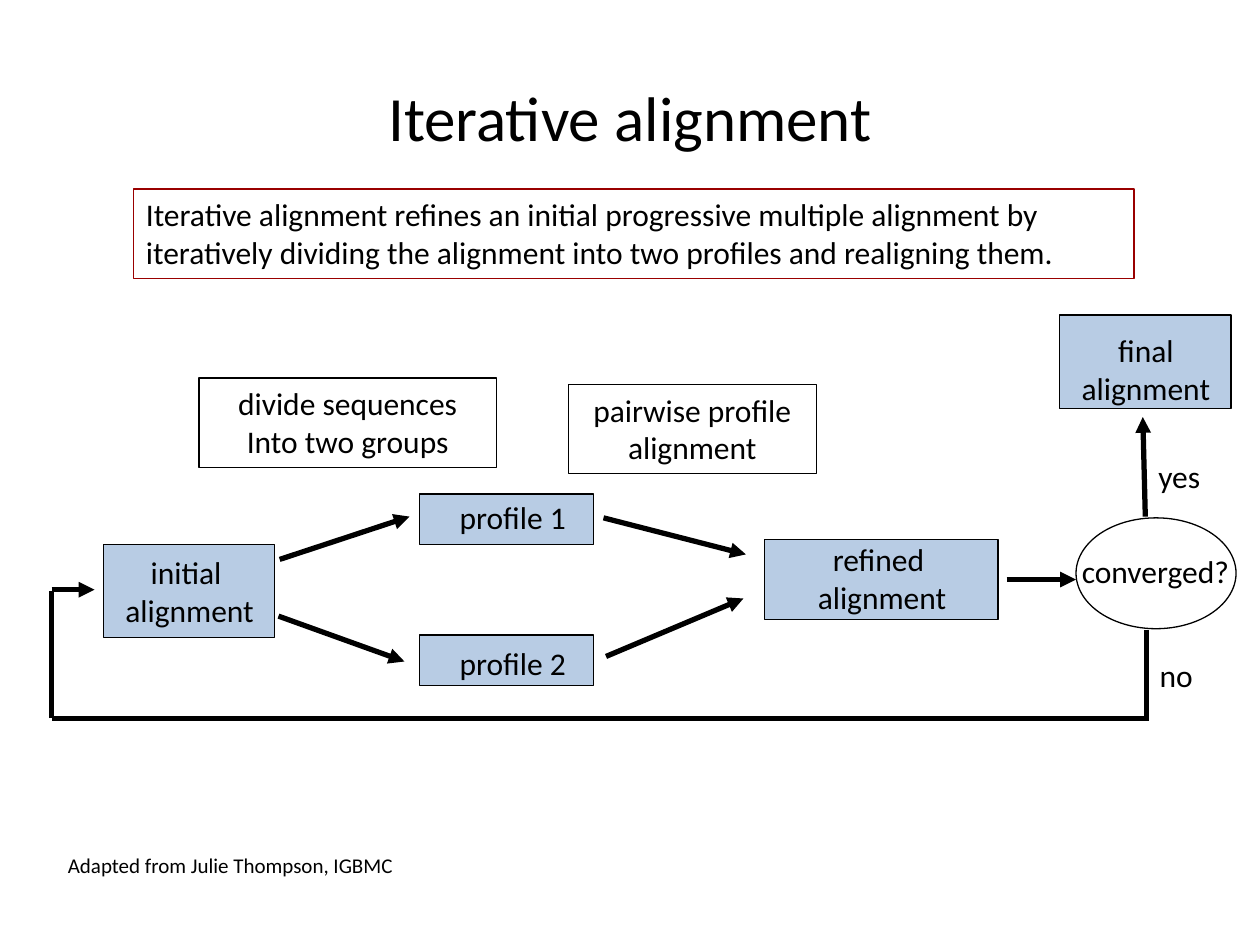
from dataclasses import dataclass

from lxml.etree import SubElement
from pptx import Presentation
from pptx.dml.color import RGBColor
from pptx.enum.shapes import MSO_CONNECTOR as Connector, MSO_SHAPE as Preset
from pptx.enum.text import MSO_ANCHOR as Anchor, MSO_AUTO_SIZE as AutoSize, PP_ALIGN as Align
from pptx.oxml.ns import qn
from pptx.util import Pt

EMU_PER_PX = 9144  # 100 px to the inch


@dataclass(frozen=True)
class Theme:
    font: str = "Calibri"
    ink: RGBColor = RGBColor(0x00, 0x00, 0x00)
    step_fill: RGBColor = RGBColor(0x4F, 0x81, 0xBD)
    step_opacity: int = 40
    summary_line: RGBColor = RGBColor(0x99, 0x00, 0x00)
    title_size: int = 36
    body_size: int = 18
    credit_size: int = 12
    outline: float = 0.75
    arrow: float = 3


THEME = Theme()


@dataclass(frozen=True)
class Box:
    left: int
    top: int
    width: int
    height: int

    def emu(self) -> tuple[int, ...]:
        return tuple(px(v) for v in (self.left, self.top, self.width, self.height))


@dataclass(frozen=True)
class Label:
    box: Box
    lines: tuple[str, ...]
    wrap: bool = False


@dataclass(frozen=True)
class Link:
    start: tuple[int, int]
    end: tuple[int, int]
    arrow: bool = True


STEPS = (
    Box(82, 432, 136, 74),   # initial alignment
    Box(333, 392, 138, 40),  # profile 1
    Box(333, 504, 138, 40),  # profile 2
    Box(607, 428, 185, 64),  # refined alignment
    Box(841, 250, 136, 74),  # final alignment
)
DECISION = Box(854, 411, 127, 88)
LABELS = (
    Label(Box(89, 434, 123, 71), ("initial ", "alignment")),
    Label(Box(354, 390, 106, 40), ("profile 1",)),
    Label(Box(354, 506, 106, 40), ("profile 2",)),
    Label(Box(614, 424, 172, 71), ("refined ", "alignment"), wrap=True),
    Label(Box(848, 258, 123, 71), ("final", "alignment")),
    Label(Box(848, 433, 138, 40), ("converged?",)),
    Label(Box(909, 358, 54, 40), ("yes",)),
    Label(Box(910, 516, 47, 40), ("no",)),
)
CAPTIONS = (
    Label(Box(158, 300, 236, 71), ("divide sequences", "Into two groups"), wrap=True),
    Label(Box(451, 305, 197, 71), ("pairwise profile", "alignment"), wrap=True),
)
SUMMARY = Label(
    Box(106, 150, 794, 71),
    ("Iterative alignment refines an initial progressive multiple alignment by "
     "iteratively dividing the alignment into two profiles and realigning them.",),
    wrap=True,
)
CREDIT = Label(Box(44, 667, 281, 40), ("Adapted from Julie Thompson, IGBMC",), wrap=True)
LINKS = (
    Link((222, 444), (325, 410)),
    Link((221, 489), (321, 525)),
    Link((479, 411), (592, 440)),
    Link((481, 521), (590, 475)),
    Link((799, 460), (854, 460)),
    Link((909, 410), (907, 331)),
    # the "no" loop back to the initial alignment
    Link((910, 568), (910, 500), arrow=False),
    Link((912, 570), (41, 570), arrow=False),
    Link((41, 570), (41, 469), arrow=False),
    Link((41, 468), (75, 468)),
)


def px(value: int) -> int:
    return value * EMU_PER_PX


def write(frame, lines: tuple[str, ...], size: int, align: Align,
          anchor: Anchor = Anchor.TOP) -> None:
    frame.text = "\n".join(lines)
    frame.vertical_anchor = anchor
    for paragraph in frame.paragraphs:
        paragraph.alignment = align
        paragraph.font.name = THEME.font
        paragraph.font.size = Pt(size)
        paragraph.font.color.rgb = THEME.ink


def add_outline(shapes, preset: Preset, box: Box, color: RGBColor = THEME.ink):
    """Add an unfilled shape with a thin line."""
    shape = shapes.add_shape(preset, *box.emu())
    shape.shadow.inherit = False
    shape.fill.background()
    shape.line.color.rgb = color
    shape.line.width = Pt(THEME.outline)
    return shape


def add_step(shapes, box: Box) -> None:
    step = add_outline(shapes, Preset.RECTANGLE, box)
    step.fill.solid()
    step.fill.fore_color.rgb = THEME.step_fill
    tint = step.fill._xPr.find(f".//{qn('a:srgbClr')}")
    SubElement(tint, qn("a:alpha"), val=str(THEME.step_opacity * 1000))


def add_label(shapes, label: Label) -> None:
    frame = shapes.add_textbox(*label.box.emu()).text_frame
    frame.word_wrap = label.wrap
    frame.auto_size = AutoSize.SHAPE_TO_FIT_TEXT
    write(frame, label.lines, THEME.body_size, Align.CENTER)


def add_framed_text(shapes, label: Label, align: Align, color: RGBColor = THEME.ink) -> None:
    frame = add_outline(shapes, Preset.RECTANGLE, label.box, color).text_frame
    frame.word_wrap = label.wrap
    frame.auto_size = AutoSize.SHAPE_TO_FIT_TEXT
    write(frame, label.lines, THEME.body_size, align)


def add_link(shapes, link: Link) -> None:
    ends = (px(v) for v in link.start + link.end)
    connector = shapes.add_connector(Connector.STRAIGHT, *ends)
    connector.line.color.rgb = THEME.ink
    connector.line.width = Pt(THEME.arrow)
    if link.arrow:
        SubElement(connector.line._get_or_add_ln(), qn("a:tailEnd"), type="triangle")
    SubElement(connector._element.spPr, qn("a:effectLst"))


def main() -> None:
    deck = Presentation()
    deck.slide_width, deck.slide_height = px(1000), px(750)
    slide = deck.slides.add_slide(deck.slide_layouts[5])
    shapes = slide.shapes

    title = shapes.title
    title.left, title.top, title.width, title.height = Box(50, 30, 900, 125).emu()
    write(title.text_frame, ("Iterative alignment",), THEME.title_size,
          Align.CENTER, Anchor.MIDDLE)

    for step in STEPS:
        add_step(shapes, step)
    add_outline(shapes, Preset.OVAL, DECISION)
    for link in LINKS:
        add_link(shapes, link)
    for label in LABELS:
        add_label(shapes, label)
    for caption in CAPTIONS:
        add_framed_text(shapes, caption, Align.CENTER)
    add_framed_text(shapes, SUMMARY, Align.LEFT, THEME.summary_line)

    credit = shapes.add_textbox(*CREDIT.box.emu()).text_frame
    credit.word_wrap = CREDIT.wrap
    write(credit, CREDIT.lines, THEME.credit_size, Align.LEFT, Anchor.MIDDLE)

    deck.save("out.pptx")


if __name__ == "__main__":
    main()
